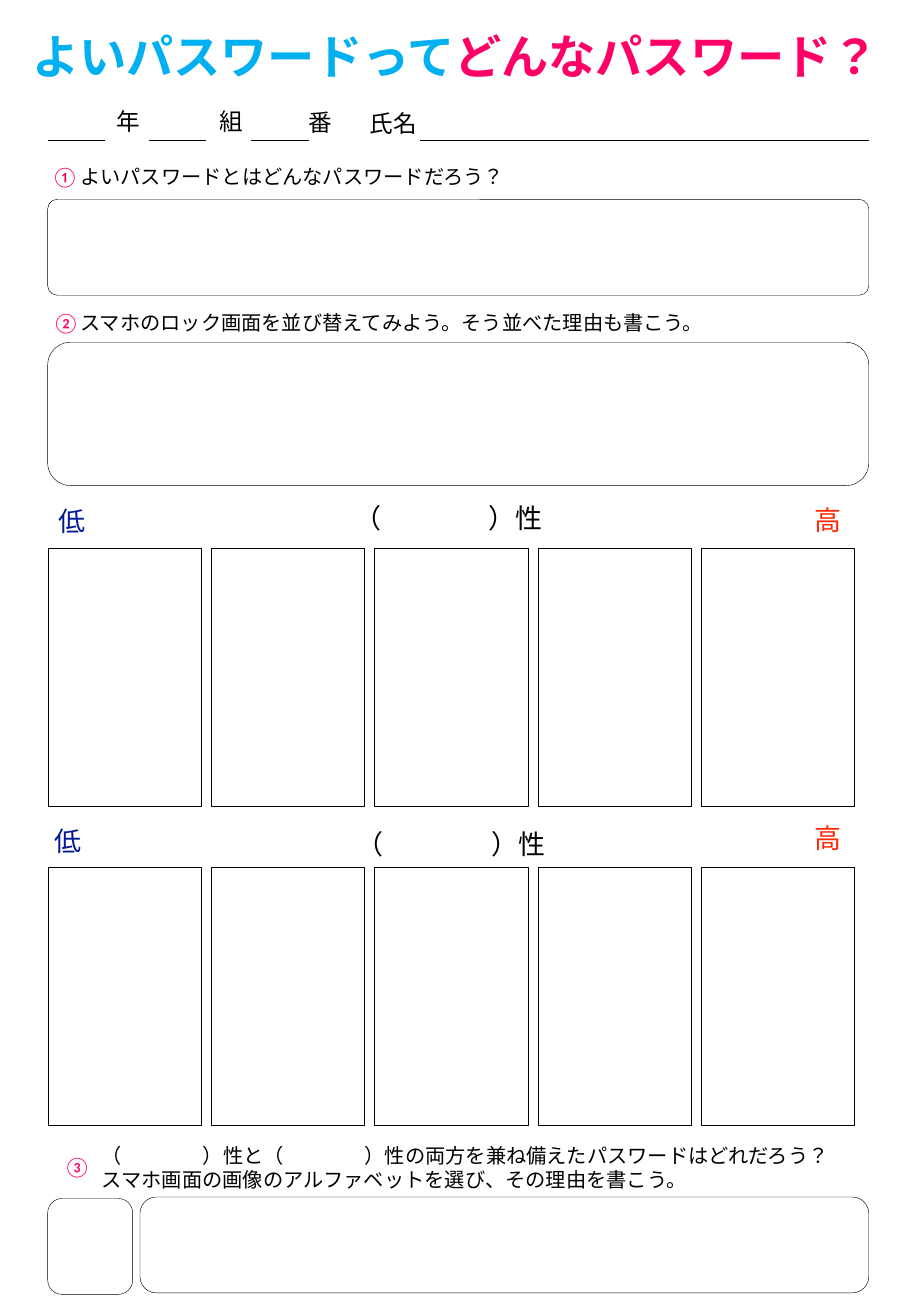
import pptx
import pptx.util
import pptx.dml.color
import pptx.enum.lang
import pptx.enum.shapes
import pptx.enum.text
import pptx.oxml.ns
import lxml.etree

Pt = pptx.util.Pt
Kind = pptx.enum.shapes.MSO_SHAPE
Align = pptx.enum.text.PP_ALIGN
JAPAN = pptx.enum.lang.MSO_LANGUAGE_ID.JAPANESE
COLORS = {"ink": "000000", "paper": "FFFFFF", "sky": "00B0F0",
          "pink": "FF0066", "low": "011893", "high": "FF2600"}
RGB = {k: pptx.dml.color.RGBColor.from_string(v) for k, v in COLORS.items()}

deck = pptx.Presentation()
deck.slide_width, deck.slide_height = Pt(540), Pt(780.48)
slide = deck.slides.add_slide(deck.slide_layouts[5])


def write(lines, x, y, w, h, size, color="ink", align=Align.CENTER, font="Calibri"):
    box = slide.shapes.add_textbox(Pt(x), Pt(y), Pt(w), Pt(h))
    frame = box.text_frame
    frame.word_wrap = True
    frame.vertical_anchor = pptx.enum.text.MSO_ANCHOR.MIDDLE
    frame.text = lines
    for para in frame.paragraphs:
        para.alignment = align
        para.font.size = Pt(size)
        para.font.name = font
        para.font.color.rgb = RGB[color]
        para.runs[0].font.language_id = JAPAN


def frame_box(kind, x, y, w, h, fill=None):
    box = slide.shapes.add_shape(kind, Pt(x), Pt(y), Pt(w), Pt(h))
    box.shadow.inherit = False
    if fill:
        box.fill.solid()
        box.fill.fore_color.rgb = RGB[fill]
    else:
        box.fill.background()
    box.line.color.rgb = RGB["ink"]
    box.line.width = Pt(0.25)
    return box


# Title
title = slide.shapes.title
title.left, title.top, title.width, title.height = Pt(0), Pt(11.5), Pt(540), Pt(43.2)
title.text_frame.auto_size = pptx.enum.text.MSO_AUTO_SIZE.NONE
title.text_frame.vertical_anchor = pptx.enum.text.MSO_ANCHOR.MIDDLE
para = title.text_frame.paragraphs[0]
para.alignment = Align.CENTER
para.font.size = Pt(28)
para.font.bold = True
para.font.name = "Calibri"
for words, color in (("よいパスワードって", "sky"), ("どんなパスワード？", "pink")):
    run = para.add_run()
    run.text = words
    run.font.color.rgb = RGB[color]
    run.font.language_id = JAPAN

# Class, number and name line
for left, right in ((28.4, 62.5), (88.2, 122.3), (148.8, 182.9), (249.1, 515)):
    rule = slide.shapes.add_connector(
        pptx.enum.shapes.MSO_CONNECTOR.STRAIGHT, Pt(left), Pt(83), Pt(right), Pt(83))
    rule.line.color.rgb = RGB["ink"]
    rule.line.width = Pt(0.25)
    lxml.etree.SubElement(rule._element.spPr, pptx.oxml.ns.qn("a:effectLst"))
for label, x, y, w in (("年", 56.9, 53.3, 38.9), ("組", 117.4, 53.3, 38.9),
                       ("番", 170.6, 53.8, 38.9), ("氏名", 209, 54.5, 48.2)):
    write(label, x, y, w, 37.4, 14)

# Questions
for mark, x, y, w in (("①", 22.4, 88.6, 32.4), ("②", 22.9, 175, 32.4),
                      ("③", 27.4, 675.4, 36.7)):
    write(mark, x, y, w, 32.4, 12, "pink")
for words, x, y, h in (
        ("よいパスワードとはどんなパスワードだろう？", 40.5, 88.6, 32.4),
        ("スマホのロック画面を並び替えてみよう。そう並べた理由も書こう。", 40.5, 175, 32.4),
        ("（　　　　）性と（　　　　）性の両方を兼ね備えたパスワードはどれだろう？\n"
         "スマホ画面の画像のアルファベットを選び、その理由を書こう。", 53.3, 671.8, 41)):
    write(words, x, y, 462.2, h, 12, align=Align.LEFT)

# Answer boxes
for x, y, w, h, bend in ((28.3, 118.2, 486.7, 56.9, 0.1), (28.3, 203, 486.7, 85, 0.16),
                         (83, 709.9, 432, 56.9, 0.17), (28.3, 710.8, 50.4, 56.9, 0.17)):
    frame_box(Kind.ROUNDED_RECTANGLE, x, y, w, h).adjustments[0] = bend

# Two rows of five cards
for top in (324.9, 514.2):
    for col in range(5):
        frame_box(Kind.RECTANGLE, 28.4 + col * 96.8, top, 90.9, 153.2, "paper")

# Scale headings above the rows
for y, w, h in ((293.8, 475.2, 26.6), (490.4, 478.2, 20.2)):
    write("（　　　　）性", 28.3, y, w, h, 16)
for word, x, y, color in (("低", 27.4, 293.2, "low"), ("高", 475.4, 292.5, "high"),
                          ("低", 25, 483.1, "low"), ("高", 475.4, 481.1, "high")):
    write(word, x, y, 31, 31, 16, color, font="Noto Sans CJK JP")

deck.save("out.pptx")
